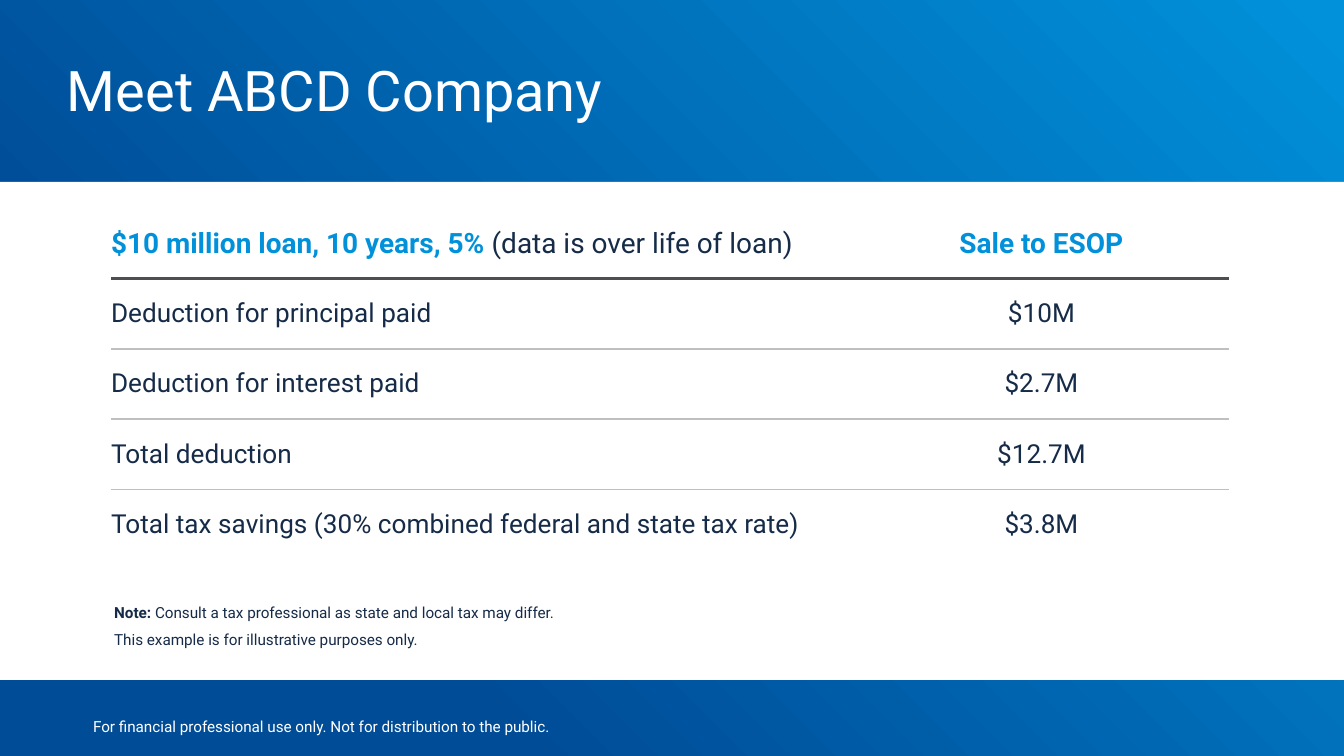
import pptx
import pptx.dml.color
import pptx.enum.dml
import pptx.enum.shapes
import pptx.enum.text
import pptx.oxml
import pptx.oxml.ns
import pptx.util

PX = 914400 / 134.4
FONT = "Roboto"
WHITE, NAVY, SKY = "FFFFFF", "162B48", "0091DA"
DEEP_BLUE, DARK_RULE, LIGHT_RULE = "004C97", "4D4E53", "BFBFBF"
ALIGN = pptx.enum.text.PP_ALIGN
ANCHOR = pptx.enum.text.MSO_ANCHOR


def px(*lengths):
    return [pptx.util.Emu(round(length * PX)) for length in lengths]


def write(para, text, size=14, color=NAVY, bold=False, align=ALIGN.LEFT):
    para.alignment = align
    span = para.add_run()
    span.text = text
    span.font.name = FONT
    span.font.size = pptx.util.Pt(size)
    span.font.bold = bold
    span.font.color.rgb = pptx.dml.color.RGBColor.from_string(color)


deck = pptx.Presentation()
deck.slide_width, deck.slide_height = px(1344, 756)
page = deck.slides.add_slide(deck.slide_layouts[5])

# Gradient background and white content panel
rectangle = pptx.enum.shapes.MSO_SHAPE.RECTANGLE
backdrop = page.shapes.add_shape(rectangle, *px(0, 0, 1344, 756))
backdrop.fill.gradient()
backdrop.fill.gradient_angle = 45
for stop, position, color in zip(backdrop.fill.gradient_stops, (0.25, 0.99), (DEEP_BLUE, SKY)):
    stop.position = position
    stop.color.rgb = pptx.dml.color.RGBColor.from_string(color)
panel = page.shapes.add_shape(rectangle, *px(0, 182, 1344, 498))
panel.fill.solid()
panel.fill.fore_color.rgb = pptx.dml.color.RGBColor.from_string(WHITE)
for shape in (backdrop, panel):
    shape.line.fill.background()
    shape.shadow.inherit = False

# Title, brought in front of the backdrop
title = page.shapes.title
page.shapes._spTree.append(title._element)
title.left, title.top, title.width, title.height = px(67, 32, 1210, 114)
frame = title.text_frame
frame.auto_size = pptx.enum.text.MSO_AUTO_SIZE.NONE
frame.vertical_anchor = ANCHOR.TOP
frame.margin_left, frame.margin_top, frame.margin_right, frame.margin_bottom = px(0, 23, 0, 0)
write(frame.paragraphs[0], "Meet ABCD Company", size=30, color=WHITE)

# Footer disclaimer
footer = page.shapes.add_textbox(*px(0, 706, 643, 40)).text_frame
footer.word_wrap = True
footer.vertical_anchor = ANCHOR.MIDDLE
write(footer.paragraphs[0],
      "For financial professional use only. Not for distribution to the public.",
      size=8.2, color=WHITE, align=ALIGN.CENTER)

# Note under the table
note = page.shapes.add_textbox(*px(101, 595, 1008, 60)).text_frame
note.word_wrap = True
note.vertical_anchor = ANCHOR.BOTTOM
write(note.paragraphs[0], "Note: ", size=8.2, bold=True)
write(note.paragraphs[0], "Consult a tax professional as state and local tax may differ.", size=8.2)
write(note.add_paragraph(), "This example is for illustrative purposes only.", size=8.2)
for para in note.paragraphs:
    para.space_after = pptx.util.Pt(4.5)

# Loan table
rows = [
    ("$10 million loan, 10 years, 5% ", "Sale to ESOP"),
    ("Deduction for principal paid", "$10M"),
    ("Deduction for interest paid", "$2.7M"),
    ("Total deduction", "$12.7M"),
    ("Total tax savings (30% combined federal and state tax rate)", "$3.8M"),
]
table = page.shapes.add_table(len(rows), 2, *px(111, 208, 1118, 352)).table
table.first_row = table.horz_banding = False
table.columns[0].width, table.columns[1].width = px(743, 375)

# Rule below each row; the outer edges stay open
rules = [None, (DARK_RULE, 2.25)] + [(LIGHT_RULE, 1)] * (len(rows) - 2) + [None]
for r, labels in enumerate(rows):
    header = r == 0
    for c, label in enumerate(labels):
        cell = table.cell(r, c)
        cell.margin_left, cell.margin_top, cell.margin_right, cell.margin_bottom = px(
            0, 0, 0, 20 if header else 0)
        cell.vertical_anchor = ANCHOR.BOTTOM if header else ANCHOR.MIDDLE
        para = cell.text_frame.paragraphs[0]
        write(para, label, size=15 if header else 14, color=SKY if header else NAVY,
              bold=header, align=ALIGN.CENTER if c else ALIGN.LEFT)
        if header:
            para.line_spacing = 0.8

        # Cell borders come before the fill in the cell properties
        properties = cell._tc.get_or_add_tcPr()
        sides = {"lnL": None, "lnR": None, "lnT": rules[r], "lnB": rules[r + 1]}
        for side, rule in sides.items():
            width = pptx.util.Pt(rule[1]) if rule else 0
            fill = f'<a:solidFill><a:srgbClr val="{rule[0]}"/></a:solidFill>' if rule else "<a:noFill/>"
            properties.append(pptx.oxml.parse_xml(
                f'<a:{side} {pptx.oxml.ns.nsdecls("a")} w="{int(width)}">{fill}</a:{side}>'))
        cell.fill.background()

write(table.cell(0, 0).text_frame.paragraphs[0], "(data is over life of loan)", size=15)

deck.save("out.pptx")
